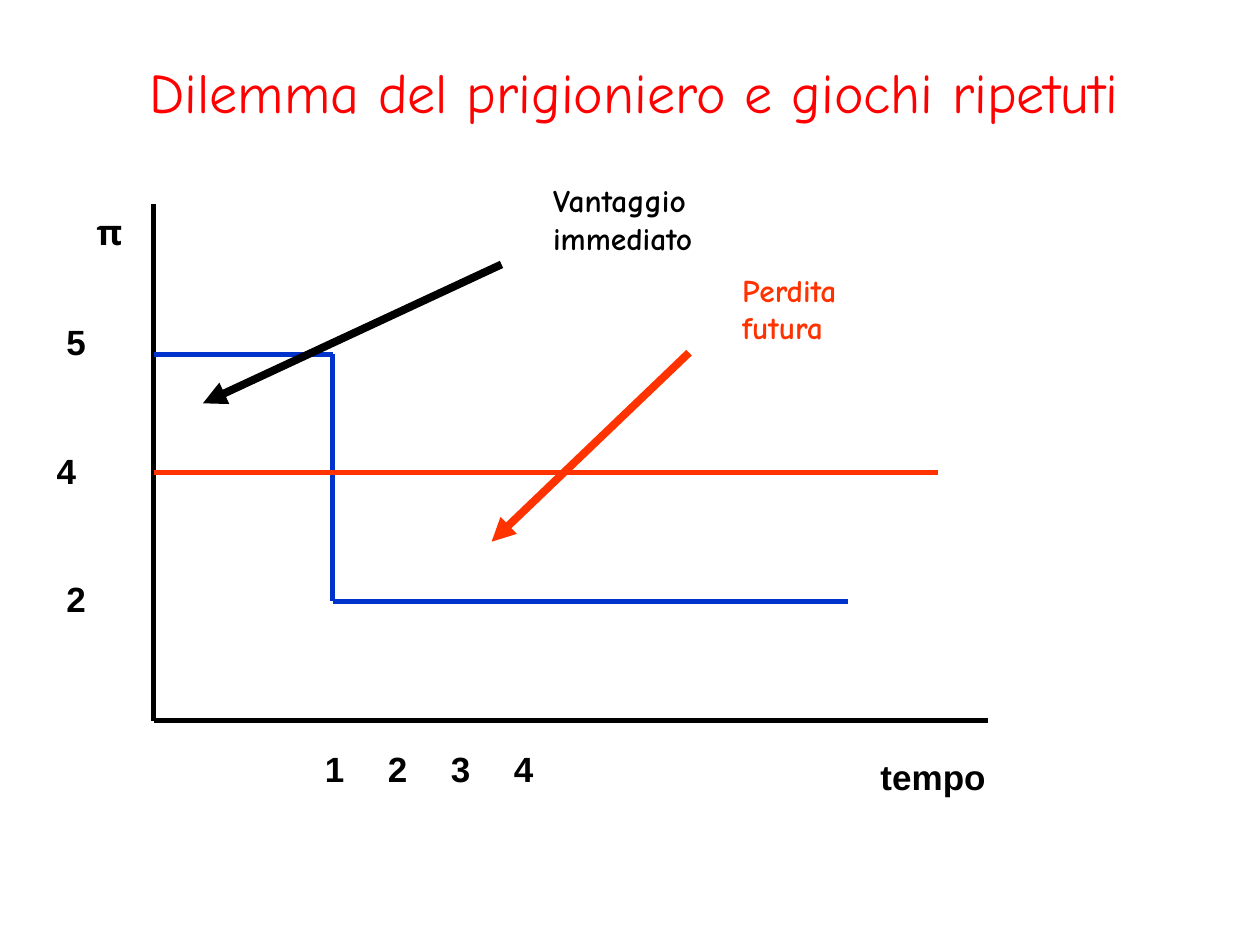
import dataclasses

import lxml.etree
import pptx
import pptx.dml.color
import pptx.enum.shapes
import pptx.enum.text
import pptx.oxml.ns
import pptx.util

Cm = pptx.util.Cm
Pt = pptx.util.Pt
qn = pptx.oxml.ns.qn


@dataclasses.dataclass(frozen=True)
class Theme:
    title_color: str = "FF0000"
    ink: str = "000000"
    cooperate: str = "FF3300"
    defect: str = "0033CC"
    label_font: str = "Arial"
    script_font: str = "Comic Neue"
    title_size: float = 32
    label_size: float = 20
    note_size: float = 18
    line_width: float = 3
    arrow_width: float = 4.5


def write_text(tf, text, *, font, size, color, bold=False, align=None):
    p = tf.paragraphs[0]
    p.alignment = align
    r = p.add_run()
    r.text = text
    r.font.name = font
    r.font.size = Pt(size)
    r.font.bold = bold
    r.font.color.rgb = pptx.dml.color.RGBColor.from_string(color)


class SlideBuilder:
    """Draws elements on the current slide; all lengths are in centimetres."""

    def __init__(self, s, theme):
        self.s = s
        self.theme = theme

    def title(self, text, left, top, width, height):
        sp = self.s.shapes.title
        sp.left, sp.top, sp.width, sp.height = map(Cm, (left, top, width, height))
        tf = sp.text_frame
        tf.word_wrap = True
        tf.auto_size = pptx.enum.text.MSO_AUTO_SIZE.NONE
        tf.vertical_anchor = pptx.enum.text.MSO_ANCHOR.MIDDLE
        write_text(tf, text, font=self.theme.script_font, size=self.theme.title_size,
                   color=self.theme.title_color, align=pptx.enum.text.PP_ALIGN.CENTER)

    def text(self, text, left, top, width, height, **style):
        sp = self.s.shapes.add_textbox(*map(Cm, (left, top, width, height)))
        tf = sp.text_frame
        tf.word_wrap = True
        tf.auto_size = pptx.enum.text.MSO_AUTO_SIZE.SHAPE_TO_FIT_TEXT
        write_text(tf, text, bold=True, **style)

    def label(self, text, left, top, width, font=None):
        self.text(text, left, top, width, 1.1, font=font or self.theme.label_font,
                  size=self.theme.label_size, color=self.theme.ink)

    def note(self, text, left, top, color):
        self.text(text, left, top, 4, 1.78, font=self.theme.script_font,
                  size=self.theme.note_size, color=color)

    def line(self, start, end, color, width=None):
        sp = self.s.shapes.add_connector(
            pptx.enum.shapes.MSO_CONNECTOR.STRAIGHT, *map(Cm, (*start, *end)))
        sp.line.color.rgb = pptx.dml.color.RGBColor.from_string(color)
        sp.line.width = Pt(width or self.theme.line_width)
        lxml.etree.SubElement(sp.element.spPr, qn("a:effectLst"))
        return sp

    def arrow(self, tip, tail, color):
        sp = self.line(tip, tail, color, self.theme.arrow_width)
        ln = sp.element.spPr.find(qn("a:ln"))
        lxml.etree.SubElement(ln, qn("a:headEnd"), type="triangle")


def main():
    prs = pptx.Presentation()
    prs.slide_width, prs.slide_height = Cm(25.4), Cm(19.05)
    theme = Theme()
    slide = SlideBuilder(prs.slides.add_slide(prs.slide_layouts[5]), theme)
    slide.title("Dilemma del prigioniero e giochi ripetuti", 1.27, 0.76, 23.04, 2.16)

    axis_x, axis_top, axis_y, axis_right = 3.1, 4.11, 14.53, 19.91
    step_x = 6.71
    payoff_y = {5: 7.14, 4: 9.53, 2: 12.12}

    # Axes
    origin = (axis_x, axis_y)
    slide.line((axis_x, axis_top), origin, theme.ink)
    slide.line(origin, (axis_right, axis_y), theme.ink)

    # Payoff paths: defection drops after the first period, cooperation is flat
    defection = [(axis_x, payoff_y[5]), (step_x, payoff_y[5]),
                 (step_x, payoff_y[2]), (17.09, payoff_y[2])]
    for start, end in zip(defection, defection[1:]):
        slide.line(start, end, theme.defect)
    slide.line((axis_x, payoff_y[4]), (18.9, payoff_y[4]), theme.cooperate)

    # Axis labels
    for payoff, left in ((5, 1.09), (4, 0.89), (2, 1.09)):
        slide.label(str(payoff), left, payoff_y[payoff] - 0.6 - 0.2 * (payoff == 5), 1.8)
    slide.label("π", 1.7, axis_top, 1.2, font=theme.script_font)
    slide.label("tempo", 17.5, 15.11, 4.19)
    slide.label("1\t2\t3\t4", 6.3, 14.94, 9.4)

    # Annotations
    slide.arrow((4.09, 8.13), (10.11, 5.33), theme.ink)
    slide.note("Vantaggio immediato", 10.9, 3.53, theme.ink)
    slide.arrow((9.91, 10.92), (13.89, 7.11), theme.cooperate)
    slide.note("Perdita futura", 14.71, 5.33, theme.cooperate)

    prs.save("out.pptx")


if __name__ == "__main__":
    main()
